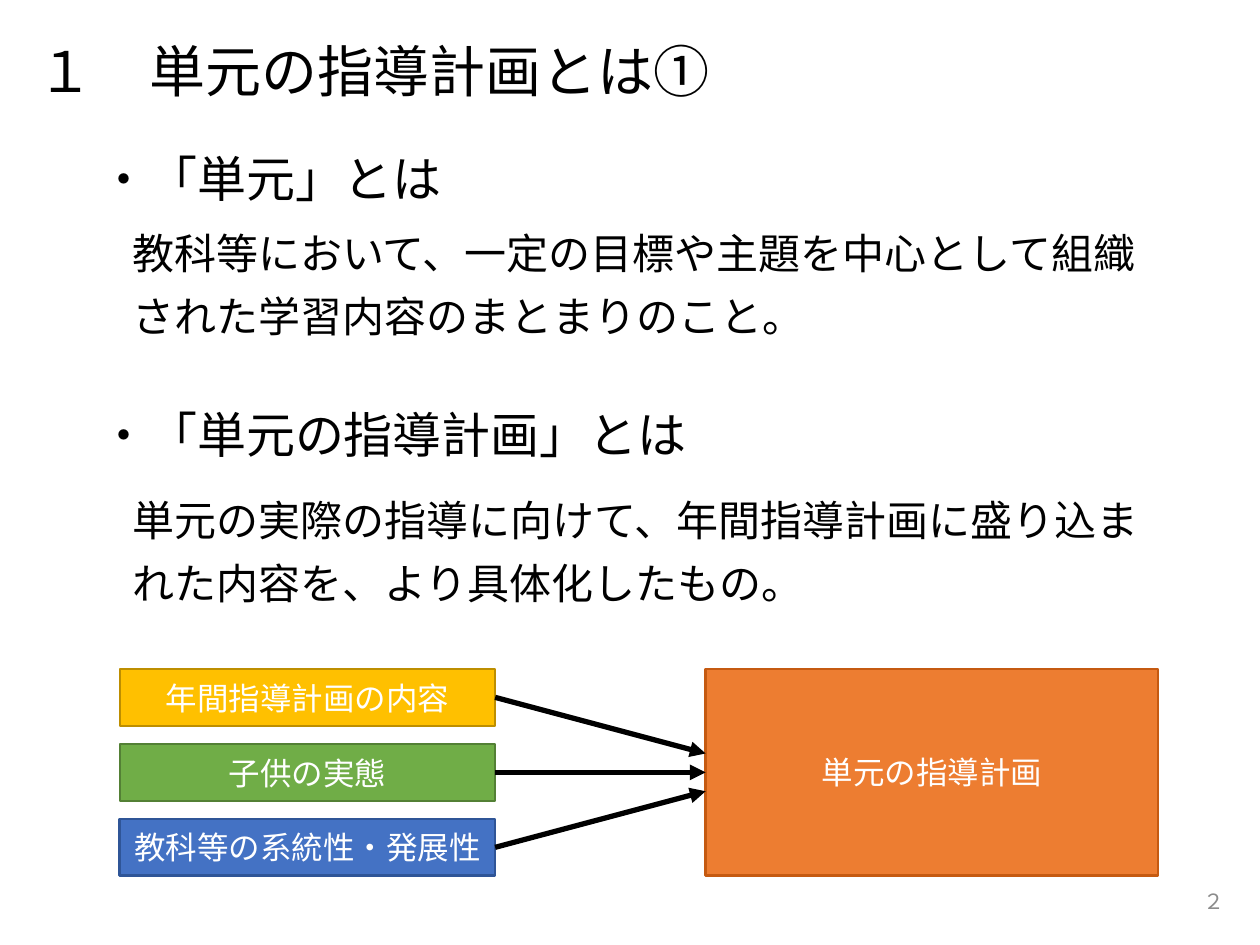
from lxml.etree import SubElement
from pptx import Presentation
from pptx.dml.color import RGBColor
from pptx.enum.shapes import MSO_CONNECTOR, MSO_SHAPE
from pptx.enum.text import MSO_ANCHOR, PP_ALIGN
from pptx.oxml.ns import qn
from pptx.util import Inches, Pt

FONT = "Noto Sans CJK JP"
CELL = Inches(0.1)  # the slide is a grid of 100 columns by 75 rows

presentation = Presentation()
presentation.slide_width = 100 * CELL
presentation.slide_height = 75 * CELL
slide = presentation.slides.add_slide(presentation.slide_layouts[6])


def grid(*cells):
    """Turn columns and rows into slide lengths."""
    return [round(cell * CELL) for cell in cells]


def write(shape, lines, size, color, anchor, **paragraph_format):
    frame = shape.text_frame
    frame.word_wrap = True
    frame.vertical_anchor = anchor
    frame.text = "\n".join(lines)
    for paragraph in frame.paragraphs:
        for name, value in paragraph_format.items():
            setattr(paragraph, name, value)
        for run in paragraph.runs:
            font_format = {"name": FONT, "size": Pt(size)}
            for name, value in font_format.items():
                setattr(run.font, name, value)
            run.font.color.rgb = RGBColor.from_string(color)
            SubElement(run.font._element, qn("a:ea"), typeface=FONT)


# Title, headings, explanations and page number
body = {"line_spacing": 0.9, "space_before": Pt(10)}
right = {"alignment": PP_ALIGN.RIGHT}
top, middle = MSO_ANCHOR.TOP, MSO_ANCHOR.MIDDLE
texts = [
    ((2, 2, 82.6, 7.1), ["１　単元の指導計画とは①"], 32, "000000", middle, {}),
    ((6.9, 11.8, 32.4, 5.7), ["・「単元」とは"], 28, "000000", top, body),
    ((9.5, 18, 83.7, 13.7),
     ["教科等において、一定の目標や主題を中心として組織",
      "された学習内容のまとまりのこと。"], 24, "000000", top, body),
    ((6.9, 32.1, 49.1, 11.9), ["・「単元の指導計画」とは"], 28, "000000", top, body),
    ((9.5, 39.2, 85.2, 10.6),
     ["単元の実際の指導に向けて、年間指導計画に盛り込ま",
      "れた内容を、より具体化したもの。"], 24, "000000", top, body),
    ((75.7, 69.5, 22.5, 4), ["２"], 12, "8C8C8C", middle, right),
]
for place, lines, size, color, anchor, paragraph_format in texts:
    text_box = slide.shapes.add_textbox(*grid(*place))
    write(text_box, lines, size, color, anchor, **paragraph_format)

# Three sources feeding one plan
LEFT, TOP, WIDTH, HEIGHT = 9.5, 53.1, 29.8, 4.5
PITCH = 5.95
PLAN_LEFT, PLAN_WIDTH = 56, 35.9
sources = [
    ("年間指導計画の内容", "FFC000", "BD8E00", 1),
    ("子供の実態", "70AD47", "538035", 1),
    ("教科等の系統性・発展性", "4472C4", "2F5597", 1.5),
]
boxes = [((LEFT, TOP + row * PITCH, WIDTH, HEIGHT), *source)
         for row, source in enumerate(sources)]
boxes.append(((PLAN_LEFT, TOP, PLAN_WIDTH, 2 * PITCH + HEIGHT),
              "単元の指導計画", "ED7D31", "C55A11", 1.5))
for place, label, fill, outline, line_width in boxes:
    box = slide.shapes.add_shape(MSO_SHAPE.RECTANGLE, *grid(*place))
    box.shadow.inherit = False
    box.fill.solid()
    box.fill.fore_color.rgb = RGBColor.from_string(fill)
    box.line.color.rgb = RGBColor.from_string(outline)
    box.line.width = Pt(line_width)
    write(box, [label], 18, "FFFFFF", middle, alignment=PP_ALIGN.CENTER)

center = TOP + PITCH + HEIGHT / 2
for offset in (-1, 0, 1):
    arrow = slide.shapes.add_connector(
        MSO_CONNECTOR.STRAIGHT,
        *grid(LEFT + WIDTH, center + offset * PITCH, PLAN_LEFT, center + offset * 1.5))
    arrow.line.color.rgb = RGBColor.from_string("000000")
    arrow.line.width = Pt(3)
    SubElement(arrow.line._get_or_add_ln(), qn("a:tailEnd"), type="triangle")
    SubElement(arrow._element.spPr, qn("a:effectLst"))

presentation.save("out.pptx")
